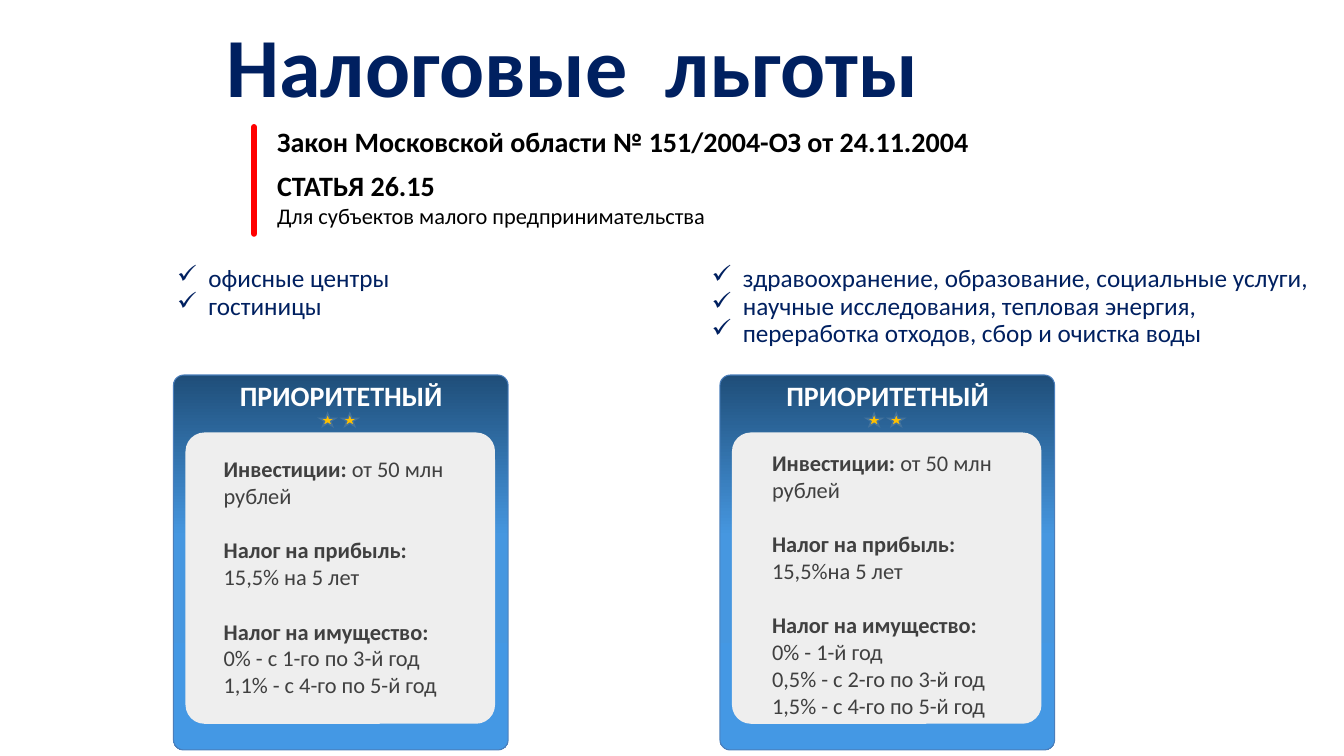
from lxml.etree import SubElement
from pptx import Presentation
from pptx.dml.color import RGBColor
from pptx.enum.shapes import MSO_CONNECTOR, MSO_SHAPE
from pptx.enum.text import MSO_ANCHOR, MSO_AUTO_SIZE, PP_ALIGN
from pptx.oxml import parse_xml
from pptx.oxml.ns import nsdecls, qn
from pptx.util import Inches, Pt

FONT = "Calibri"
COLORS = {
    "navy": "002060", "black": "000000", "white": "FFFFFF", "red": "FF0000",
    "panel": "EEEEEE", "body": "404040", "star": "FFC000", "star_edge": "43739E",
}
CARD_GRADIENT = [(0, "1F4E79"), (43, "4697E0"), (100, "4498E4")]
BLANK_LINE = 19.5  # height of one 16 pt line, in points


def color(name):
    return RGBColor.from_string(COLORS[name])


def style(paragraph, size, color_name, bold=False):
    for run in paragraph.runs:
        run.font.name = FONT
        run.font.size = Pt(size)
        run.font.bold = bold
        run.font.color.rgb = color(color_name)


def add_frame(slide, left, top, width, height, wrap=True):
    box = slide.shapes.add_textbox(Inches(left), Inches(top), Inches(width), Inches(height))
    box.text_frame.word_wrap = wrap
    return box.text_frame


def add_block(slide, left, top, width, height, preset, fill=None, radius=None):
    block = slide.shapes.add_shape(
        preset, Inches(left), Inches(top), Inches(width), Inches(height))
    block.shadow.inherit = False
    block.line.fill.background()
    if radius is not None:
        block.adjustments[0] = radius
    if fill:
        block.fill.solid()
        block.fill.fore_color.rgb = color(fill)
    return block


def fill_gradient(block, stops):
    stop_xml = "".join(
        f'<a:gs pos="{pos * 1000}"><a:srgbClr val="{value}"/></a:gs>' for pos, value in stops)
    gradient = parse_xml(
        f'<a:gradFill {nsdecls("a")} rotWithShape="1"><a:gsLst>{stop_xml}</a:gsLst>'
        '<a:lin ang="5400000" scaled="0"/></a:gradFill>')
    block._element.spPr.find(qn("a:prstGeom")).addnext(gradient)


def add_title(slide, text):
    title = slide.shapes.title
    title.left, title.top = Inches(-0.33), Inches(-0.08)
    title.width, title.height = Inches(12.02), Inches(1.28)
    frame = title.text_frame
    frame.text = text
    frame.auto_size = MSO_AUTO_SIZE.NONE
    frame.vertical_anchor = MSO_ANCHOR.BOTTOM
    heading = frame.paragraphs[0]
    heading.alignment = PP_ALIGN.CENTER
    heading.line_spacing = 0.9
    style(heading, 60, "navy", True)


def add_law(slide):
    law = add_frame(slide, 2.65, 1.19, 7.48, 0.44)
    law.text = "Закон Московской области № 151/2004-ОЗ от 24.11.2004"
    style(law.paragraphs[0], 20, "black", True)

    article = add_frame(slide, 2.65, 1.62, 4.52, 0.71, wrap=False)
    article.text = "СТАТЬЯ 26.15\nДля субъектов малого предпринимательства"
    style(article.paragraphs[0], 20, "black", True)
    style(article.paragraphs[1], 16, "black")

    # Red bar beside the law
    bar = slide.shapes.add_connector(
        MSO_CONNECTOR.STRAIGHT, Inches(2.52), Inches(1.26), Inches(2.52), Inches(2.32))
    bar.line.color.rgb = color("red")
    bar.line.width = Pt(4.25)
    bar.line._get_or_add_ln().set("cap", "rnd")
    SubElement(bar._element.spPr, qn("a:effectLst"))


def add_checklist(slide, left, items):
    frame = add_frame(slide, left, 2.59, 6.16, 0.71)
    frame.text = "\n".join(items)
    for item in frame.paragraphs:
        properties = item._p.get_or_add_pPr()
        properties.set("marL", str(Inches(0.31)))
        properties.set("indent", str(Inches(-0.31)))
        SubElement(properties, qn("a:buChar")).set("char", "✓")
        item.line_spacing = 0.9
        style(item, 18, "navy")


def add_star(slide, left):
    star = add_block(slide, left, 4.1, 0.16, 0.13, MSO_SHAPE.STAR_5_POINT, "star")
    star.line.color.rgb = color("star_edge")
    star.line.width = Pt(1)
    SubElement(star.line._get_or_add_ln(), qn("a:miter")).set("lim", "800000")


def add_card(slide, left):
    card = add_block(slide, left, 3.72, 3.32, 3.72, MSO_SHAPE.ROUNDED_RECTANGLE, radius=0.031)
    card._element.spPr.remove(card._element.spPr.find(qn("a:ln")))
    card.line.fill.background()
    fill_gradient(card, CARD_GRADIENT)
    add_block(slide, left + 0.12, 4.29, 3.07, 2.89,
              MSO_SHAPE.ROUNDED_RECTANGLE, "panel", 0.065)
    heading = add_frame(slide, left + 0.38, 3.71, 2.57, 0.44)
    heading.text = "ПРИОРИТЕТНЫЙ"
    heading.paragraphs[0].alignment = PP_ALIGN.CENTER
    style(heading.paragraphs[0], 20, "white", True)
    for offset in (1.45, 1.67):
        add_star(slide, left + offset)


def add_terms(slide, left, top, width, height, profit_rate, property_rates):
    frame = add_frame(slide, left, top, width, height)
    headings = ("Налог на прибыль:", "Налог на имущество:")
    frame.text = "\n".join(
        ["Инвестиции: ", headings[0], profit_rate, headings[1], *property_rates])
    investment = frame.paragraphs[0]
    investment.add_run().text = "от 50 млн рублей"
    for term in frame.paragraphs:
        is_heading = term.text in headings
        style(term, 16, "body", is_heading)
        if is_heading:
            term.space_before = Pt(BLANK_LINE)
    investment.runs[0].font.bold = True


def main():
    presentation = Presentation()
    presentation.slide_width = Inches(13.33)
    presentation.slide_height = Inches(7.5)
    slide = presentation.slides.add_slide(presentation.slide_layouts[5])

    # Heading and law
    add_title(slide, "Налоговые  льготы")
    add_law(slide)

    # Eligible activities
    add_checklist(slide, 1.66, ["офисные центры", "гостиницы"])
    add_checklist(slide, 6.96, [
        "здравоохранение, образование, социальные услуги,",
        "научные исследования, тепловая энергия,",
        "переработка отходов, сбор и очистка воды",
    ])

    # Benefit cards
    for left in (1.72, 7.14):
        add_card(slide, left)
    add_terms(slide, 2.12, 4.47, 2.58, 2.39, "15,5% на 5 лет",
              ["0% - с 1-го по 3-й год", "1,1% - с 4-го по 5-й год"])
    add_terms(slide, 7.56, 4.41, 2.53, 2.79, "15,5%на 5 лет",
              ["0% - 1-й год", "0,5% - с 2-го по 3-й год", "1,5% - с 4-го по 5-й год"])

    presentation.save("out.pptx")


if __name__ == "__main__":
    main()
